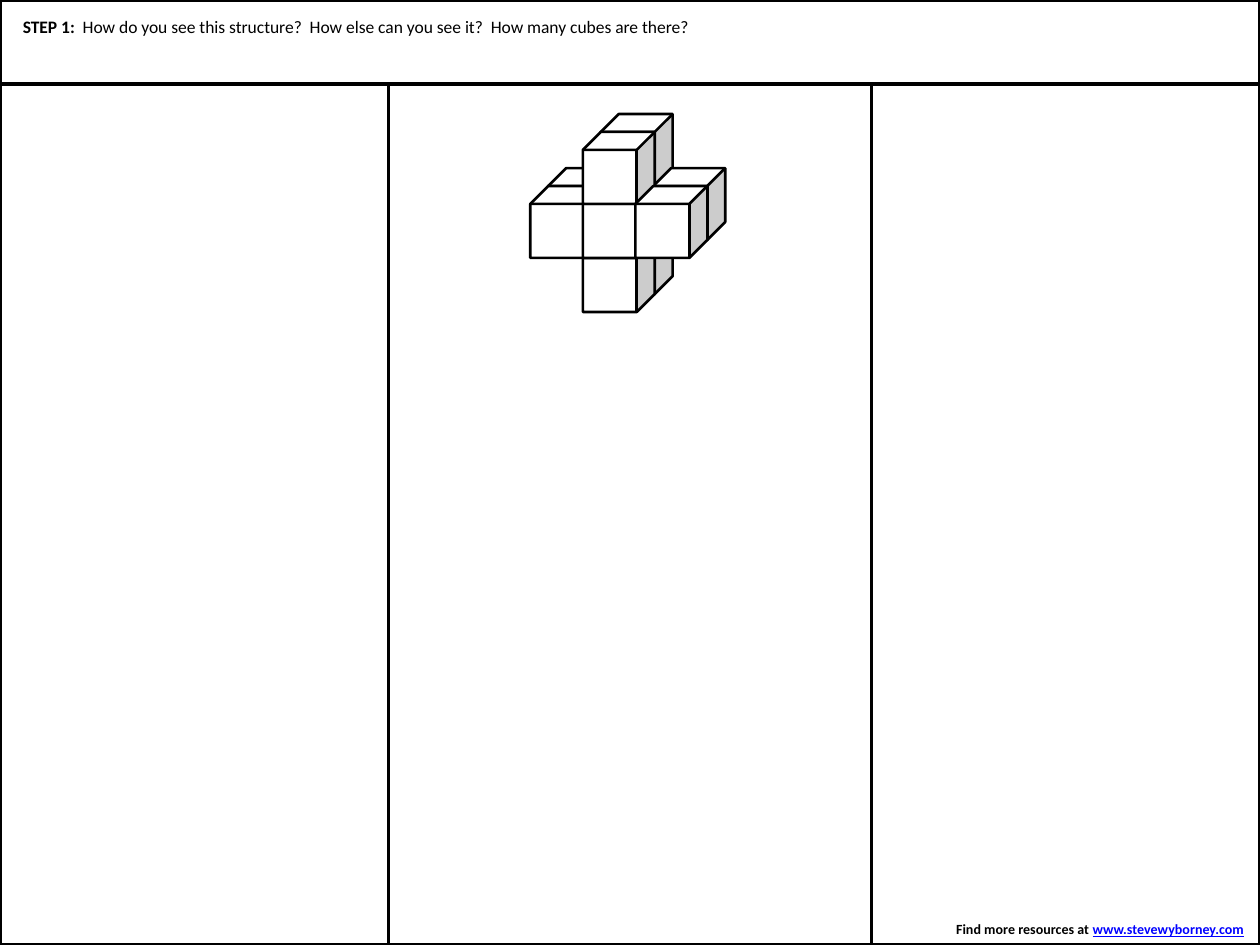
import pptx
import pptx.util
import pptx.dml.color
import pptx.enum.shapes
import pptx.enum.text

Cm = pptx.util.Cm
Shape = pptx.enum.shapes.MSO_SHAPE
Align = pptx.enum.text.PP_ALIGN
Anchor = pptx.enum.text.MSO_ANCHOR
Fit = pptx.enum.text.MSO_AUTO_SIZE

WIDE, HIGH = 25.4, 19.05


def tint(code):
    return pptx.dml.color.RGBColor.from_string(code)


def apply(thing, form):
    for name, value in form.items():
        setattr(thing, name, value)


class Sheet:
    ink, paper, link = "000000", "FFFFFF", "0000FF"
    face = "Calibri"

    def __init__(self, slide):
        self.slide = slide

    def group(self):
        return self.slide.shapes.add_group_shape().shapes

    def solid(self, host, kind, place, fill=None, line=None):
        shape = host.add_shape(kind, *map(Cm, place))
        shape.shadow.inherit = False
        if fill:
            shape.fill.solid()
            shape.fill.fore_color.rgb = tint(fill)
        else:
            shape.fill.background()
        if line:
            shape.line.color.rgb = tint(self.ink)
            shape.line.width = pptx.util.Pt(line)
        else:
            shape.line.fill.background()
        return shape

    def letter(self, shape, runs, size, align, **frame):
        apply(shape.text_frame, frame)
        para = shape.text_frame.paragraphs[0]
        para.alignment = align
        for text, color, form in runs:
            run = para.add_run()
            run.text = text
            apply(run.font, {"name": self.face, "size": pptx.util.Pt(size), **form})
            run.font.color.rgb = tint(color)

    def label(self, place, runs, size, align, **frame):
        box = self.slide.shapes.add_textbox(*map(Cm, place))
        self.letter(box, runs, size, align, **frame)


def main():
    deck = pptx.Presentation()
    deck.slide_width, deck.slide_height = Cm(WIDE), Cm(HIGH)
    sheet = Sheet(deck.slides.add_slide(deck.slide_layouts[6]))

    # Page frame: middle and side columns, then the header band
    side = 7.83
    frame = sheet.group()
    for left, width in ((side, WIDE - 2 * side), (0, side), (WIDE - side, side)):
        sheet.solid(frame, Shape.RECTANGLE, (left, 0, width, HIGH), line=2)
    sheet.solid(frame, Shape.RECTANGLE, (0, 0, WIDE, 1.7), sheet.paper, 2)

    # Footer
    sheet.label(
        (18.95, 18.44, 6.45, 0.61),
        [("Find more resources at ", sheet.ink, {"bold": True}),
         ("www.stevewyborney.com", sheet.link, {"bold": True, "underline": True})],
        8, Align.RIGHT, word_wrap=False, auto_size=Fit.SHAPE_TO_FIT_TEXT,
        margin_right=Cm(0.32))

    # Question
    band = sheet.solid(sheet.slide.shapes, Shape.RECTANGLE,
                       (0.21, 0.21, 24.98, 0.64), sheet.paper)
    sheet.letter(
        band,
        [("STEP 1:  ", sheet.ink, {"bold": True}),
         ("How do you see this structure?  How else can you see it?  "
          "How many cubes are there?", sheet.ink, {"bold": False})],
        10, Align.LEFT, word_wrap=True, vertical_anchor=Anchor.MIDDLE)

    # Two crosses of cubes, the back layer first
    edge, depth = 1.45, 0.36
    across, down = 1.06, 1.09
    cross = ((-1, 0), (0, 1), (0, 0), (0, -1), (1, 0))
    cubes = sheet.group()
    for layer in range(2):
        for col, row in cross:
            left = 12.11 + col * across - layer * depth
            top = 3.39 + row * down + layer * depth
            sheet.solid(cubes, Shape.CUBE, (left, top, edge, edge), sheet.paper, 1.5)

    deck.save("out.pptx")


if __name__ == "__main__":
    main()
